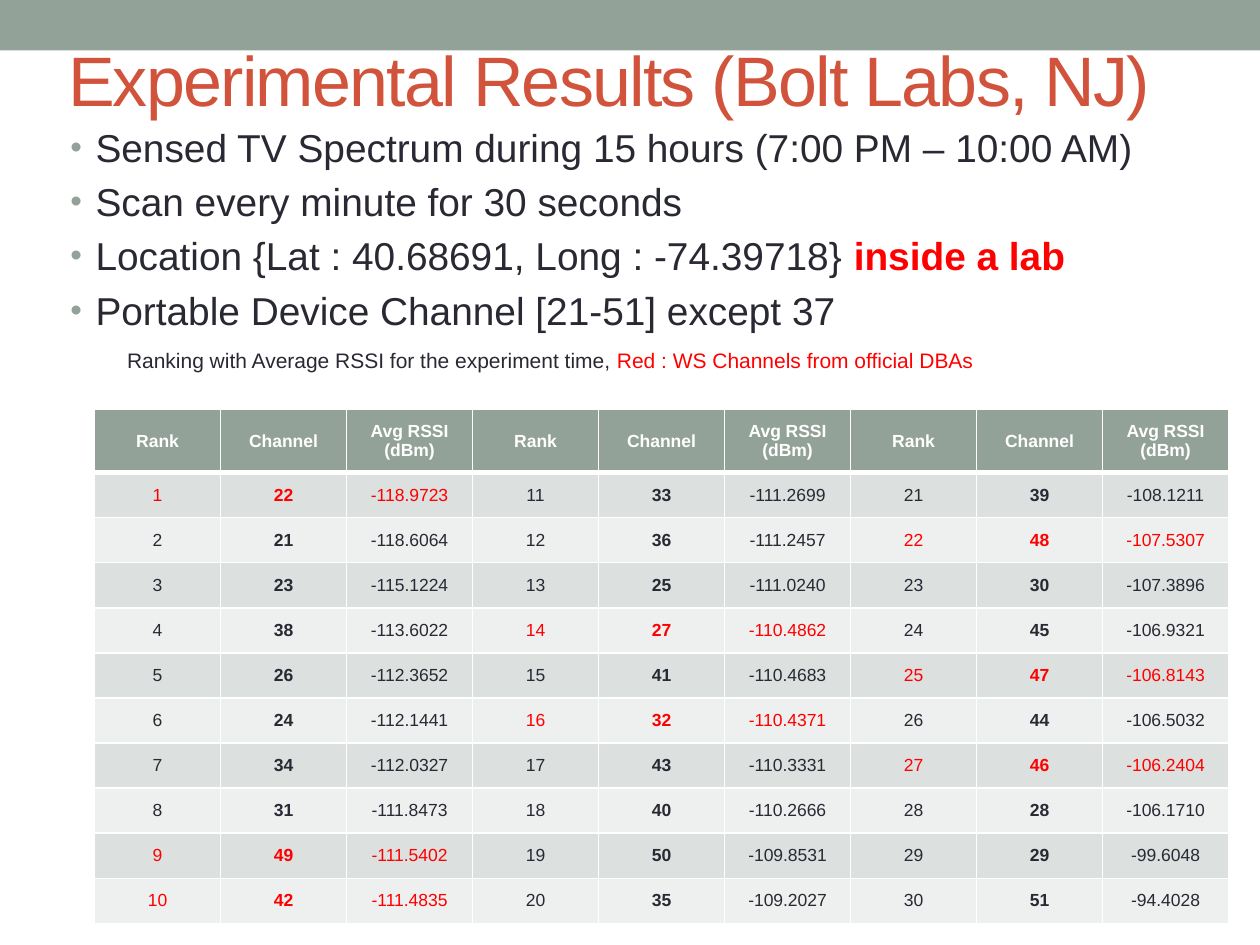
from lxml.etree import SubElement
from pptx import Presentation
from pptx.dml.color import RGBColor
from pptx.enum.shapes import MSO_SHAPE
from pptx.enum.text import MSO_ANCHOR, MSO_AUTO_SIZE, PP_ALIGN
from pptx.oxml.ns import qn
from pptx.util import Inches, Pt

FONT = "Arial"
SAGE = "93A299"
DARK = "292934"
RED = "FF0000"
WHITE = "FFFFFF"
RUST = "D2533C"
BAND_FILLS = ("DCE0DE", "EEF0EF")

BULLETS = [
    [("Sensed TV Spectrum during 15 hours (7:00 PM – 10:00 AM)", DARK, False)],
    [("Scan every minute for 30 seconds", DARK, False)],
    [("Location {Lat : 40.68691, Long : -74.39718} ", DARK, False),
     ("inside a lab", RED, True)],
    [("Portable Device Channel [21-51] except 37", DARK, False)],
]

HEADERS = ("Rank", "Channel", "Avg RSSI (dBm)")
RANKING = [
    (22, "-118.9723"), (21, "-118.6064"), (23, "-115.1224"), (38, "-113.6022"),
    (26, "-112.3652"), (24, "-112.1441"), (34, "-112.0327"), (31, "-111.8473"),
    (49, "-111.5402"), (42, "-111.4835"), (33, "-111.2699"), (36, "-111.2457"),
    (25, "-111.0240"), (27, "-110.4862"), (41, "-110.4683"), (32, "-110.4371"),
    (43, "-110.3331"), (40, "-110.2666"), (50, "-109.8531"), (35, "-109.2027"),
    (39, "-108.1211"), (48, "-107.5307"), (30, "-107.3896"), (45, "-106.9321"),
    (47, "-106.8143"), (44, "-106.5032"), (46, "-106.2404"), (28, "-106.1710"),
    (29, "-99.6048"), (51, "-94.4028"),
]
WHITE_SPACE_CHANNELS = {22, 27, 32, 42, 46, 47, 48, 49}
ROWS_PER_GROUP = 10
GROUPS = len(RANKING) // ROWS_PER_GROUP
TABLE_HEIGHT = 4.08
HEADER_HEIGHT = 0.5


def color(value):
    return RGBColor.from_string(value)


def add_run(paragraph, text, size, fill, bold=False):
    run = paragraph.add_run()
    run.text = text
    run.font.name = FONT
    run.font.size = Pt(size)
    run.font.bold = bold
    run.font.color.rgb = color(fill)
    return run


def add_top_band(slide, width):
    band = slide.shapes.add_shape(MSO_SHAPE.RECTANGLE, 0, 0, width, Inches(0.4))
    band.shadow.inherit = False
    band.fill.solid()
    band.fill.fore_color.rgb = color(SAGE)
    band.line.fill.background()
    slide.shapes._spTree.insert(2, band._element)


def format_title(slide, text):
    title = slide.shapes.title
    title.left, title.top = Inches(0.44), Inches(0)
    title.width, title.height = Inches(9), Inches(1.25)
    frame = title.text_frame
    frame.vertical_anchor = MSO_ANCHOR.MIDDLE
    frame.auto_size = MSO_AUTO_SIZE.NONE
    paragraph = frame.paragraphs[0]
    paragraph.alignment = PP_ALIGN.LEFT
    run = add_run(paragraph, text, 40, RUST)
    run.font._element.set("spc", "-100")


def add_text_frame(slide, left, top, width, height):
    box = slide.shapes.add_textbox(
        Inches(left), Inches(top), Inches(width), Inches(height))
    box.text_frame.word_wrap = True
    return box.text_frame


def set_bullet(paragraph):
    properties = paragraph._p.get_or_add_pPr()
    properties.set("marL", str(Inches(0.2)))
    properties.set("indent", str(-Inches(0.2)))
    bullet_color = SubElement(properties, qn("a:buClr"))
    SubElement(bullet_color, qn("a:srgbClr"), val=SAGE)
    SubElement(properties, qn("a:buSzPct"), val="85000")
    SubElement(properties, qn("a:buFont"), typeface=FONT)
    SubElement(properties, qn("a:buChar"), char="•")


def add_bullets(slide):
    frame = add_text_frame(slide, 0.46, 0.93, 8.99, 2.08)
    for index, runs in enumerate(BULLETS):
        paragraph = frame.paragraphs[0] if index == 0 else frame.add_paragraph()
        paragraph.space_before = Pt(4.4)
        set_bullet(paragraph)
        for text, fill, bold in runs:
            add_run(paragraph, text, 22.2, fill, bold)


def add_caption(slide):
    paragraph = add_text_frame(slide, 0.91, 2.71, 8.08, 0.3).paragraphs[0]
    add_run(paragraph, "Ranking with Average RSSI for the experiment time, ", 12, DARK)
    add_run(paragraph, "Red : WS Channels from official DBAs", 12, RED)


def set_borders(cell, bottom):
    properties = cell._tc.get_or_add_tcPr()
    widths = {"a:lnL": 1, "a:lnR": 1, "a:lnT": 1, "a:lnB": bottom}
    for position, (tag, width) in enumerate(widths.items()):
        line = SubElement(properties, qn(tag), w=str(Pt(width)))
        fill = SubElement(line, qn("a:solidFill"))
        SubElement(fill, qn("a:srgbClr"), val=WHITE)
        properties.insert(position, line)


def fill_cell(cell, text, fill, text_color, bold, bottom=1):
    cell.fill.solid()
    cell.fill.fore_color.rgb = color(fill)
    set_borders(cell, bottom)
    cell.vertical_anchor = MSO_ANCHOR.MIDDLE
    paragraph = cell.text_frame.paragraphs[0]
    paragraph.alignment = PP_ALIGN.CENTER
    add_run(paragraph, text, 10, text_color, bold)


def add_ranking_table(slide):
    columns = len(HEADERS) * GROUPS
    table = slide.shapes.add_table(
        ROWS_PER_GROUP + 1, columns,
        Inches(0.75), Inches(3.25), Inches(9), Inches(TABLE_HEIGHT)).table
    row_height = (TABLE_HEIGHT - HEADER_HEIGHT) / ROWS_PER_GROUP
    for column in table.columns:
        column.width = Inches(1)
    for index, row in enumerate(table.rows):
        row.height = Inches(row_height if index else HEADER_HEIGHT)
    for column in range(columns):
        header = HEADERS[column % len(HEADERS)]
        fill_cell(table.cell(0, column), header, SAGE, WHITE, True, bottom=3)
    for index, (channel, rssi) in enumerate(RANKING):
        group, row = divmod(index, ROWS_PER_GROUP)
        text_color = RED if channel in WHITE_SPACE_CHANNELS else DARK
        for offset, text in enumerate((str(index + 1), str(channel), rssi)):
            cell = table.cell(row + 1, group * len(HEADERS) + offset)
            fill_cell(cell, text, BAND_FILLS[row % 2], text_color, offset == 1)


def main():
    presentation = Presentation()
    presentation.slide_width = Inches(10)
    presentation.slide_height = Inches(7.5)
    slide = presentation.slides.add_slide(presentation.slide_layouts[5])
    add_top_band(slide, presentation.slide_width)
    format_title(slide, "Experimental Results (Bolt Labs, NJ)")
    add_bullets(slide)
    add_ranking_table(slide)
    add_caption(slide)
    presentation.save("out.pptx")


if __name__ == "__main__":
    main()
